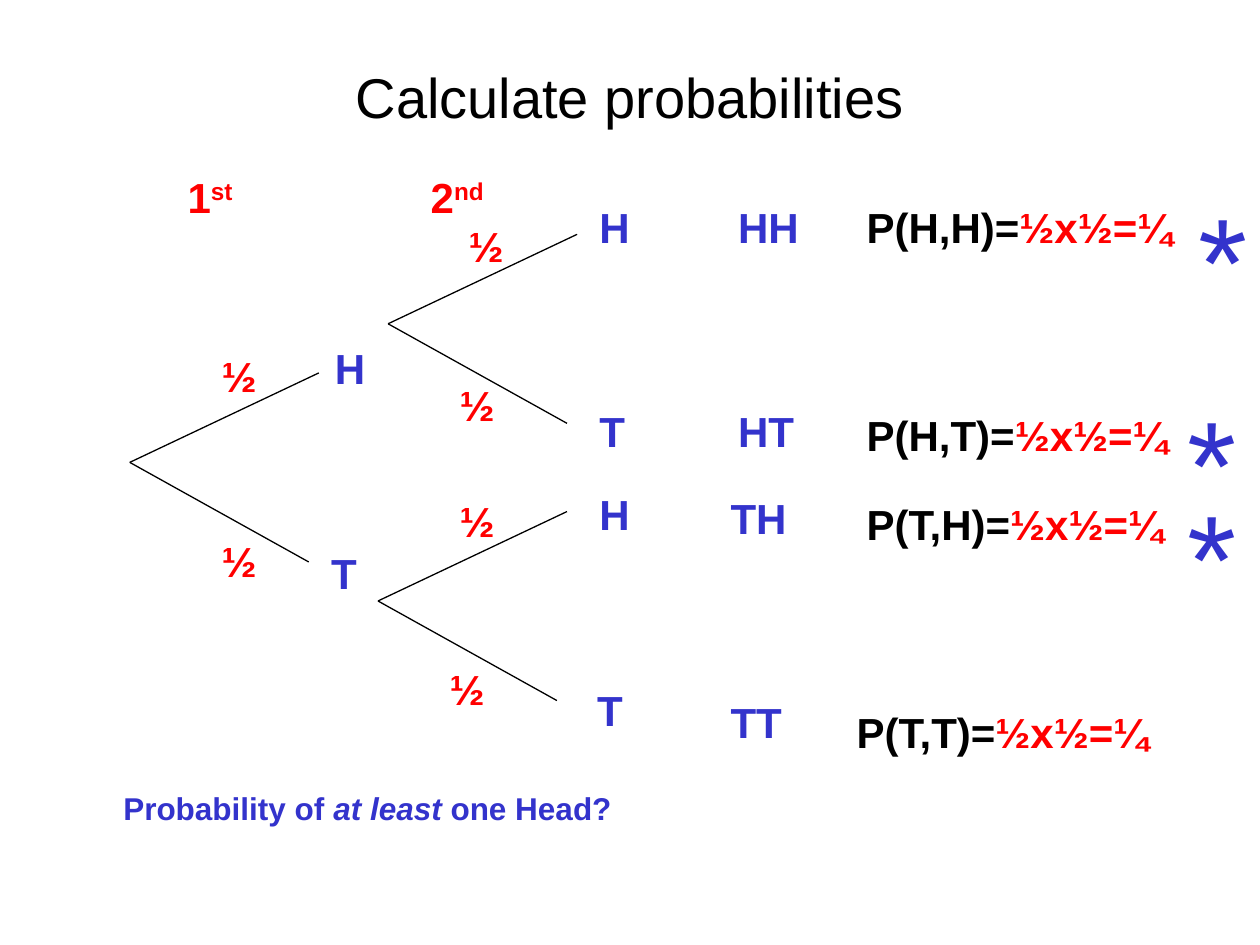
from pptx import Presentation
from pptx.dml.color import RGBColor
from pptx.enum.shapes import MSO_CONNECTOR
from pptx.enum.text import MSO_ANCHOR, MSO_AUTO_SIZE, PP_ALIGN
from pptx.oxml.ns import qn
from pptx.util import Inches, Pt
from lxml.etree import SubElement

COLORS = {"black": "000000", "red": "FF0000", "blue": "3333CC"}
WIDTH, HEIGHT = Inches(10), Inches(7.5)
COLUMNS, ROWS = 100, 75

BRANCH_UP = (15, -7.1)
BRANCH_DOWN = (14.2, 7.9)
FORKS = [(10.3, 36.7), (30.8, 25.7), (30, 47.7)]

TOSSES = [("1", "st", 13.9, 5.9), ("2", "nd", 33.2, 7.5)]
FACES = [("H", 25.6, 26.7), ("H", 46.6, 15.5), ("H", 46.6, 38.3),
         ("T", 25.3, 43), ("T", 46.6, 31.7), ("T", 46.4, 53.8)]
OUTCOMES = [("HH", 57.6, 15.5), ("HT", 57.6, 31.7),
            ("TH", 57, 38.6), ("TT", 57, 54.8)]
FACE_WIDTHS = {"H": 4.4, "T": 4, "HH": 6.8, "HT": 6.5, "TH": 6.5, "TT": 6.1}
HALVES = [(16.6, 27.3), (16.6, 42), (36.2, 17),
          (35.5, 29.6), (34.7, 52.2), (35.5, 38.8)]
PRODUCTS = [("P(H,H)=", 67.8, 15.5, 26.3), ("P(H,T)=", 67.8, 32, 25.9),
            ("P(T,H)=", 67.8, 39.1, 25.9), ("P(T,T)=", 67, 55.6, 25.5)]
STARS = [(94.1, 13.9), (93.3, 30), (93.3, 37.5)]


def col(count):
    return round(WIDTH * count / COLUMNS)


def row(count):
    return round(HEIGHT * count / ROWS)


def add_run(paragraph, wording, color, size=24, bold=True, italic=False, baseline=None):
    run = paragraph.add_run()
    run.text = wording
    style = {"name": "Arial", "size": Pt(size), "bold": bold, "italic": italic}
    for attribute, value in style.items():
        setattr(run.font, attribute, value)
    run.font.color.rgb = RGBColor.from_string(COLORS[color])
    if baseline:
        run.font._element.set("baseline", str(baseline * 1000))


def add_label(slide, left, top, width, *runs, height=5):
    label = slide.shapes.add_textbox(col(left), row(top), col(width), row(height))
    frame = label.text_frame
    frame.word_wrap = False
    frame.auto_size = MSO_AUTO_SIZE.SHAPE_TO_FIT_TEXT
    for run in runs:
        add_run(frame.paragraphs[0], **run)


def add_fork(slide, x, y):
    fork = slide.shapes.add_group_shape()
    for across, down in (BRANCH_UP, BRANCH_DOWN):
        branch = fork.shapes.add_connector(
            MSO_CONNECTOR.STRAIGHT, col(x), row(y), col(x + across), row(y + down))
        branch.line.width = Pt(0.75)
        branch.line.color.rgb = RGBColor.from_string(COLORS["black"])
        SubElement(branch._element.spPr, qn("a:effectLst"))


def set_title(slide, wording):
    title = slide.shapes.title
    place = {"left": col(5), "top": row(3), "width": col(90), "height": row(9.3)}
    for attribute, value in place.items():
        setattr(title, attribute, value)
    title.text_frame.vertical_anchor = MSO_ANCHOR.MIDDLE
    heading = title.text_frame.paragraphs[0]
    heading.alignment = PP_ALIGN.CENTER
    add_run(heading, wording, "black", size=32, bold=False)


def main():
    presentation = Presentation()
    presentation.slide_width, presentation.slide_height = WIDTH, HEIGHT
    slide = presentation.slides.add_slide(presentation.slide_layouts[5])

    set_title(slide, "Calculate probabilities")
    for x, y in FORKS:
        add_fork(slide, x, y)
    for face, x, y in FACES + OUTCOMES:
        add_label(slide, x, y, FACE_WIDTHS[face], {"wording": face, "color": "blue"})
    for number, ending, x, width in TOSSES:
        add_label(slide, x, 13.1, width, {"wording": number, "color": "red"},
                  {"wording": ending, "color": "red", "baseline": 30})
    for x, y in HALVES:
        add_label(slide, x, y, 4.8, {"wording": "½", "color": "red"})
    for event, x, y, width in PRODUCTS:
        add_label(slide, x, y, width, {"wording": event, "color": "black"},
                  {"wording": "½x½=¼", "color": "red"})

    question = {"color": "blue", "size": 18}
    add_label(slide, 8.8, 62.1, 40.8,
              {"wording": "Probability of ", **question},
              {"wording": "at least", "italic": True, **question},
              {"wording": " one Head?", **question}, height=4)
    for x, y in STARS:
        add_label(slide, x, y, 5.9,
                  {"wording": "*", "color": "blue", "size": 72, "bold": False}, height=13)

    presentation.save("out.pptx")


if __name__ == "__main__":
    main()
